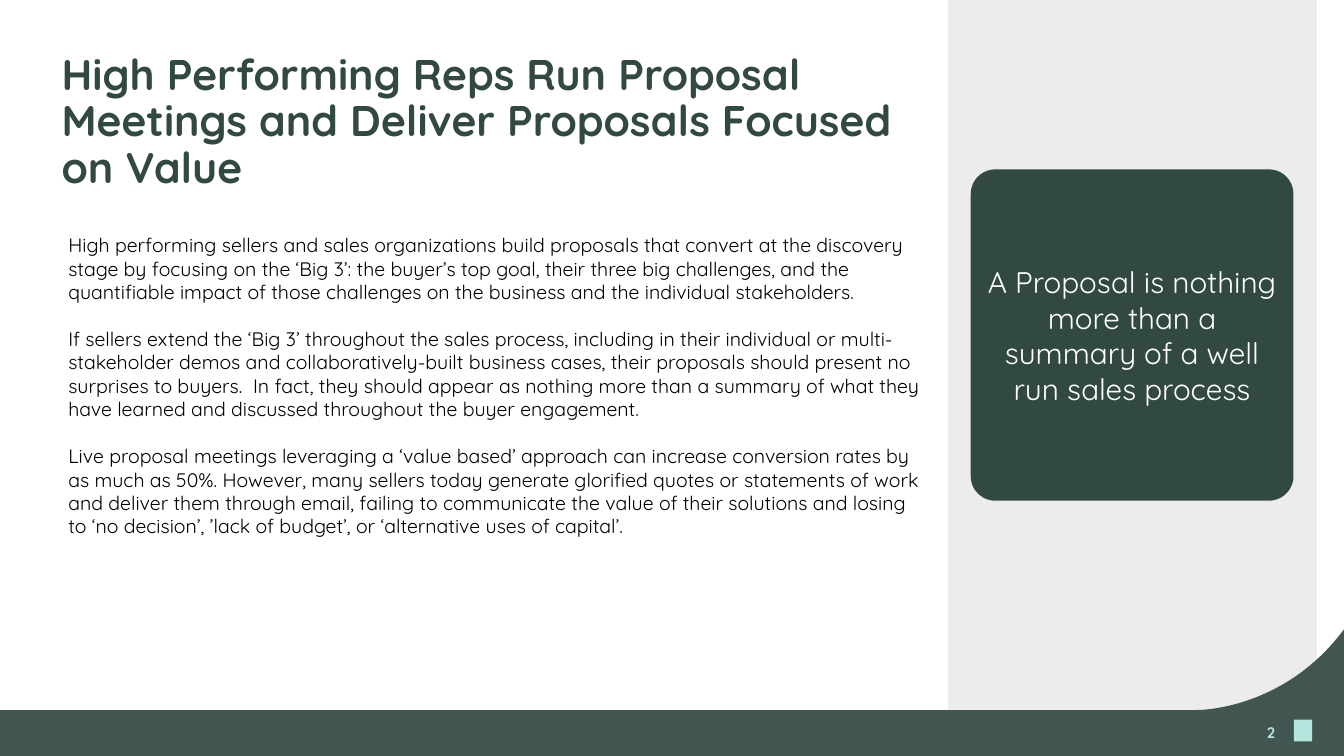
from pptx import Presentation
from pptx.dml.color import RGBColor
from pptx.enum.shapes import MSO_SHAPE
from pptx.enum.text import MSO_ANCHOR, MSO_AUTO_SIZE, PP_ALIGN
from pptx.util import Cm, Pt

FONT = "Quicksand"
COLORS = {
    "panel": "ECEDEB",
    "card": "324943",
    "footer": "415651",
    "mint": "B5E5DC",
    "body": "000000",
    "white": "FFFFFF",
}
SLIDE_W, SLIDE_H = 55.85, 31.42

TITLE = ("High Performing Reps Run Proposal Meetings and Deliver "
         "Proposals Focused on Value")
BODY = [
    "High performing sellers and sales organizations build proposals that "
    "convert at the discovery stage by focusing on the ‘Big 3’: the buyer’s "
    "top goal, their three big challenges, and the quantifiable impact of "
    "those challenges on the business and the individual stakeholders.",
    "If sellers extend the ‘Big 3’ throughout the sales process, including in "
    "their individual or multi-stakeholder demos and collaboratively-built "
    "business cases, their proposals should present no surprises to buyers.  "
    "In fact, they should appear as nothing more than a summary of what they "
    "have learned and discussed throughout the buyer engagement.",
    "Live proposal meetings leveraging a ‘value based’ approach can increase "
    "conversion rates by as much as 50%. However, many sellers today generate "
    "glorified quotes or statements of work and deliver them through email, "
    "failing to communicate the value of their solutions and losing to ‘no "
    "decision’, ’lack of budget’, or ‘alternative uses of capital’.",
]
QUOTE = "A Proposal is nothing more than a summary of a well run sales process"


def paint(shape, color):
    shape.shadow.inherit = False
    shape.fill.solid()
    shape.fill.fore_color.rgb = RGBColor.from_string(COLORS[color])
    shape.line.fill.background()


def add_block(slide, kind, box, color):
    block = slide.shapes.add_shape(kind, *map(Cm, box))
    paint(block, color)
    return block


def write(shape, texts, size, color, align=PP_ALIGN.LEFT, bold=False,
          anchor=MSO_ANCHOR.TOP, margins=(0.25, 0.25), gap=0, spacing=1.0):
    """Fill a shape with paragraphs; margins are (sides, top and bottom) in cm."""
    frame = shape.text_frame
    frame.word_wrap = True
    frame.auto_size = MSO_AUTO_SIZE.NONE
    frame.vertical_anchor = anchor
    frame.margin_left = frame.margin_right = Cm(margins[0])
    frame.margin_top = frame.margin_bottom = Cm(margins[1])
    for index, text in enumerate(texts):
        paragraph = frame.add_paragraph() if index else frame.paragraphs[0]
        paragraph.text = text
        paragraph.alignment = align
        paragraph.line_spacing = spacing
        paragraph.space_before = Pt(gap if index else 0)
        paragraph.font.name = FONT
        paragraph.font.size = Pt(size)
        paragraph.font.bold = bold
        paragraph.font.color.rgb = RGBColor.from_string(COLORS[color])


def add_side_panel(slide, box):
    left, top, width, height = box
    add_block(slide, MSO_SHAPE.RECTANGLE, box, "panel")
    card = add_block(slide, MSO_SHAPE.ROUNDED_RECTANGLE,
                     (left + 0.94, top + 7.04, 13.41, 13.77), "card")
    card.adjustments[0] = 0.076
    write(card, [QUOTE], 35, "white", PP_ALIGN.CENTER,
          anchor=MSO_ANCHOR.MIDDLE, margins=(0.35, 0.25))


def bezier(points, steps=32):
    """Return points along a cubic curve, without its start."""
    curve = []
    for step in range(1, steps + 1):
        t = step / steps
        weights = ((1 - t) ** 3, 3 * t * (1 - t) ** 2, 3 * t ** 2 * (1 - t), t ** 3)
        curve.append(tuple(Cm(sum(w * p[axis] for w, p in zip(weights, points)))
                           for axis in (0, 1)))
    return curve


def add_footer(slide, box):
    left, top, width, height = box
    right, bottom = left + width, top + height
    bar_top = bottom - 1.91
    bend = (right - 6.09, bar_top)
    swoop = bezier([bend, bend, (right - 2.51, bar_top + 0.03), (right, top)])
    outline = slide.shapes.build_freeform(Cm(left), Cm(bottom), scale=1.0)
    corners = [(left, bar_top), bend]
    outline.add_line_segments([(Cm(x), Cm(y)) for x, y in corners] + swoop
                              + [(Cm(right), Cm(bottom))], close=True)
    paint(outline.convert_to_shape(), "footer")

    add_block(slide, MSO_SHAPE.RECTANGLE,
              (right - 2.08, bar_top + 0.4, 0.76, 0.9), "mint")
    page_number = slide.shapes.add_textbox(
        Cm(right - 4.01), Cm(bar_top + 0.56), Cm(1.4), Cm(0.86))
    write(page_number, ["2"], 18, "mint", PP_ALIGN.RIGHT, bold=True,
          anchor=MSO_ANCHOR.MIDDLE, margins=(0.25, 0.13), spacing=0.9)


def add_article(slide, box):
    left, top, width, height = box
    title = slide.shapes.title
    title.left, title.top = Cm(left), Cm(top)
    title.width, title.height = Cm(35.33), Cm(6.1)
    write(title, [TITLE], 50.5, "card", bold=True, anchor=MSO_ANCHOR.BOTTOM,
          margins=(0.25, 0.13), spacing=0.9)
    body = slide.shapes.add_textbox(
        Cm(left + 0.28), Cm(top + 7.42), Cm(width - 0.28), Cm(height - 7.42))
    write(body, BODY, 23, "body", gap=27.6)


def main():
    deck = Presentation()
    deck.slide_width, deck.slide_height = Cm(SLIDE_W), Cm(SLIDE_H)
    slide = deck.slides.add_slide(deck.slide_layouts[5])
    add_side_panel(slide, (39.4, 0, 15.32, 29.79))
    add_footer(slide, (0, SLIDE_H - 5.26, SLIDE_W, 5.26))
    add_article(slide, (2.31, 2.03, 36.35, 21.72))
    deck.save("out.pptx")


if __name__ == "__main__":
    main()
